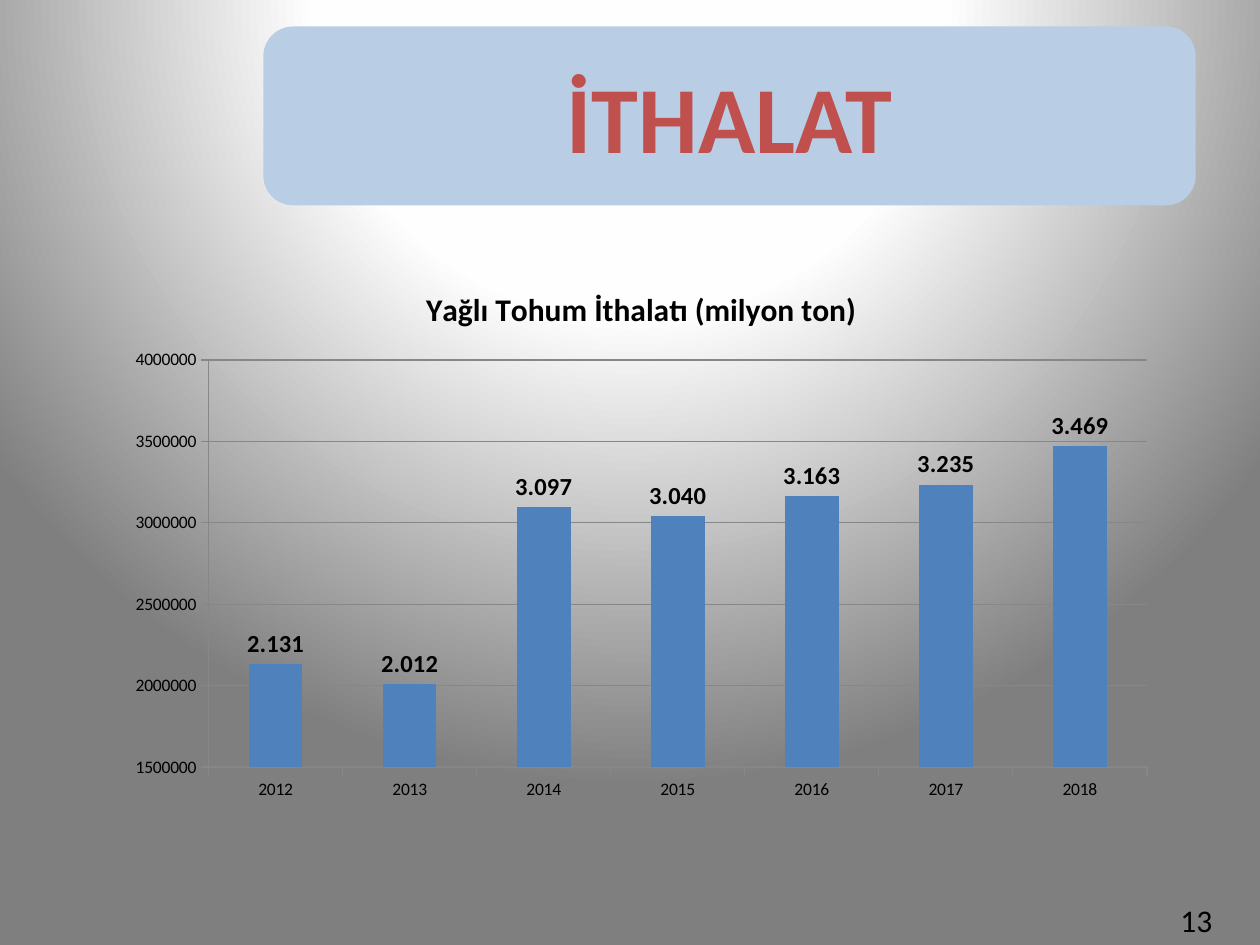
import pptx
import pptx.chart.data
import pptx.dml.color
import pptx.enum.chart
import pptx.enum.shapes
import pptx.enum.text
import pptx.oxml
import pptx.util
from dataclasses import dataclass

Inches = pptx.util.Inches
Align = pptx.enum.text.PP_ALIGN
A_NS = "http://schemas.openxmlformats.org/drawingml/2006/main"


@dataclass
class Box:
    left: float
    top: float
    width: float
    height: float

    def size(self) -> tuple:
        return tuple(map(Inches, (self.left, self.top, self.width, self.height)))


@dataclass
class Bar:
    year: str
    tons: int  # thousand tons

    def label(self) -> str:
        return f"{self.tons // 1000}.{self.tons % 1000:03}"


BARS = [Bar("2012", 2131), Bar("2013", 2012), Bar("2014", 3097), Bar("2015", 3040),
        Bar("2016", 3163), Bar("2017", 3235), Bar("2018", 3469)]
HEAD = Box(2.09, 0.21, 7.4, 1.42)
PLOT = Box(0.91, 2.1, 8.36, 4.33)
PAGE = Box(9.27, 7.1, 0.51, 0.4)


def color(code: str):
    return pptx.dml.color.RGBColor.from_string(code)


def style(font, size: float, code: str = "000000", bold: bool = False) -> None:
    font.name = "Calibri"
    font.size = pptx.util.Pt(size)
    font.bold = bold
    font.color.rgb = color(code)


def write(frame, text: str, *, size: float, code: str = "000000",
          bold: bool = False, align=None) -> None:
    para = frame.paragraphs[0]
    if align is not None:
        para.alignment = align
    run = para.add_run()
    run.text = text
    style(run.font, size, code, bold)


def paint(slide) -> None:
    """Fill the background with a round gradient."""
    fill = slide.background.fill
    fill.gradient()
    grad = slide.background._cSld.bg.bgPr.find(f"{{{A_NS}}}gradFill")
    for node in list(grad):
        grad.remove(node)
    stops = "".join(f'<a:gs pos="{pos}000"><a:srgbClr val="{code}"/></a:gs>'
                    for pos, code in ((0, "FFFFFF"), (40, "FEFEFE"), (100, "7F7F7F")))
    for xml in (f'<a:gsLst xmlns:a="{A_NS}">{stops}</a:gsLst>',
                f'<a:path xmlns:a="{A_NS}" path="circle"><a:fillToRect l="50000" '
                f't="-80000" r="50000" b="180000"/></a:path>'):
        grad.append(pptx.oxml.parse_xml(xml))


def head(slide, box: Box, text: str) -> None:
    """Place the title on a rounded plate."""
    plate = slide.shapes.add_shape(
        pptx.enum.shapes.MSO_SHAPE.ROUNDED_RECTANGLE, *box.size())
    plate.shadow.inherit = False
    plate.fill.solid()
    plate.fill.fore_color.rgb = color("B9CDE5")
    plate.line.fill.background()
    title = slide.shapes.title
    title.left, title.top, title.width, title.height = box.size()
    # The plate goes behind the title
    title._element.addprevious(plate._element)
    title.text_frame.vertical_anchor = pptx.enum.text.MSO_ANCHOR.MIDDLE
    write(title.text_frame, text, size=54, code="C0504D", bold=True, align=Align.CENTER)


def plot(slide, box: Box, bars: list[Bar], text: str) -> None:
    """Draw the column chart with a label on each bar."""
    kinds = pptx.enum.chart
    data = pptx.chart.data.CategoryChartData()
    data.categories = [bar.year for bar in bars]
    data.add_series("Series 1", [bar.tons * 1000 for bar in bars])
    chart = slide.shapes.add_chart(
        kinds.XL_CHART_TYPE.COLUMN_CLUSTERED, *box.size(), data).chart
    style(chart.font, 10)
    chart.has_legend = False
    chart.has_title = True
    write(chart.chart_title.text_frame, text, size=18, bold=True)
    chart.chart_title.include_in_layout = False

    # Axes
    value = chart.value_axis
    value.minimum_scale, value.maximum_scale = 1500000, 4000000
    value.major_unit = 500000
    value.has_major_gridlines = True
    value.tick_labels.number_format = "0"
    value.tick_labels.number_format_is_linked = False
    for axis in (value, chart.category_axis):
        axis.major_tick_mark = kinds.XL_TICK_MARK.OUTSIDE
        axis.format.line.color.rgb = color("878787")
    value.major_gridlines.format.line.color.rgb = color("878787")

    # Bars and labels
    group = chart.plots[0]
    group.gap_width = 150
    group.vary_by_categories = False
    series = group.series[0]
    series.format.fill.solid()
    series.format.fill.fore_color.rgb = color("4F81BD")
    labels = series.data_labels
    labels.show_value = True
    labels.position = kinds.XL_LABEL_POSITION.OUTSIDE_END
    style(labels.font, 14, bold=True)
    for i, bar in enumerate(bars):
        label = series.points[i].data_label
        write(label.text_frame, bar.label(), size=14, bold=True)
        label.position = kinds.XL_LABEL_POSITION.OUTSIDE_END


def main() -> None:
    deck = pptx.Presentation()
    deck.slide_width, deck.slide_height = Inches(10), Inches(7.5)
    slide = deck.slides.add_slide(deck.slide_layouts[5])
    paint(slide)
    head(slide, HEAD, "İTHALAT")
    plot(slide, PLOT, BARS, "Yağlı Tohum İthalatı (milyon ton)")

    # Page number
    page = slide.shapes.add_textbox(*PAGE.size()).text_frame
    page.word_wrap = True
    write(page, "13", size=18)
    deck.save("out.pptx")


if __name__ == "__main__":
    main()
